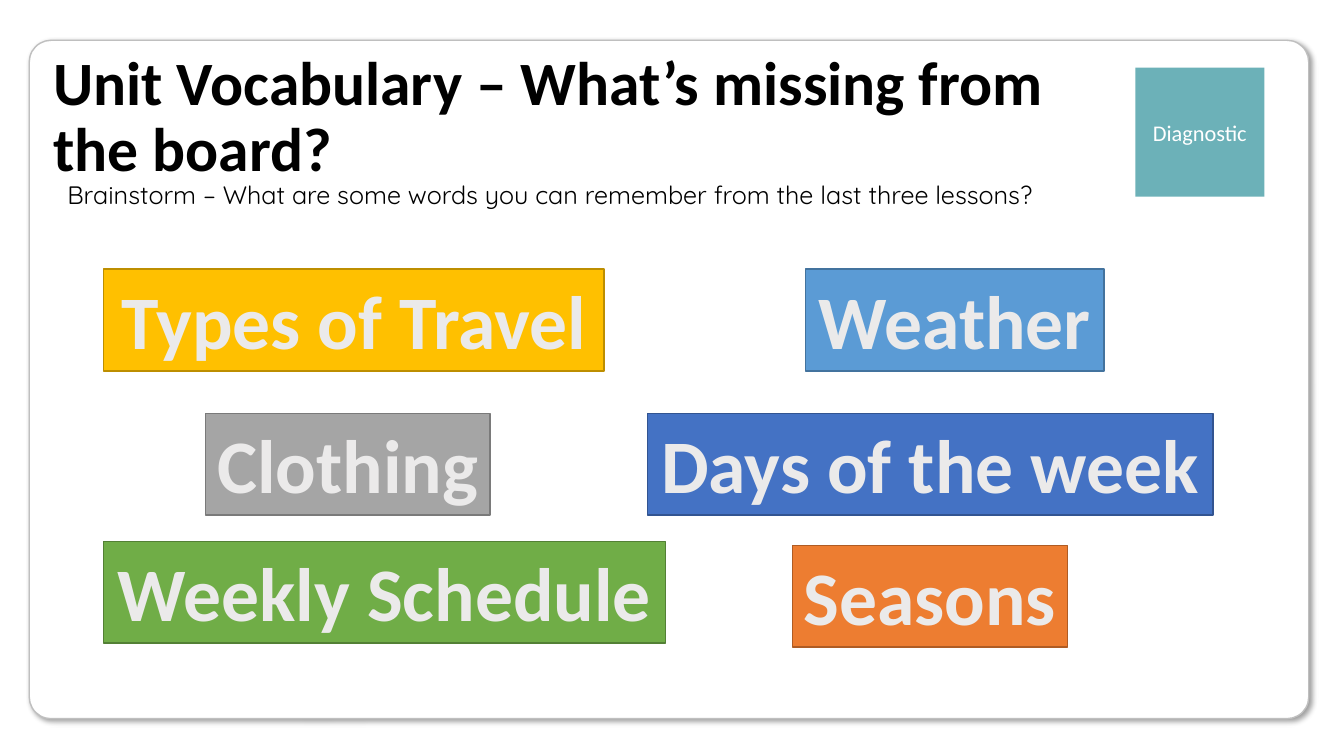
"""Build the unit vocabulary slide with its six topic labels."""
from lxml import etree
from pptx import Presentation
from pptx.dml.color import RGBColor
from pptx.enum import shapes, text
from pptx.oxml import ns
from pptx.util import Inches, Pt

WHITE = RGBColor(0xFF, 0xFF, 0xFF)
BLACK = RGBColor(0x00, 0x00, 0x00)
CARD_LINE = RGBColor(0xBF, 0xBF, 0xBF)
TEAL = RGBColor(0x6C, 0xB1, 0xB8)
LABEL_TEXT = RGBColor(0xEB, 0xEA, 0xEA)
LABEL_OUTLINE = RGBColor(0x3A, 0x52, 0x74)
BLUE, BLUE_LINE = RGBColor(0x5B, 0x9B, 0xD5), RGBColor(0x43, 0x73, 0x9E)
GOLD, GOLD_LINE = RGBColor(0xFF, 0xC0, 0x00), RGBColor(0xBD, 0x8E, 0x00)
GRAY, GRAY_LINE = RGBColor(0xA5, 0xA5, 0xA5), RGBColor(0x7A, 0x7A, 0x7A)
ORANGE, ORANGE_LINE = RGBColor(0xED, 0x7D, 0x31), RGBColor(0xAF, 0x5C, 0x24)
NAVY, NAVY_LINE = RGBColor(0x44, 0x72, 0xC4), RGBColor(0x32, 0x54, 0x91)
GREEN, GREEN_LINE = RGBColor(0x70, 0xAD, 0x47), RGBColor(0x53, 0x80, 0x35)

LABEL_HEIGHT = 1.01
LABELS = [
    ("Weather", 7.99, 2.67, 2.96, BLUE, BLUE_LINE),
    ("Types of Travel", 1.03, 2.67, 4.96, GOLD, GOLD_LINE),
    ("Clothing", 2.04, 4.1, 2.82, GRAY, GRAY_LINE),
    ("Seasons", 7.86, 5.41, 2.73, ORANGE, ORANGE_LINE),
    ("Days of the week", 6.42, 4.1, 5.61, NAVY, NAVY_LINE),
    ("Weekly Schedule", 1.03, 5.37, 5.57, GREEN, GREEN_LINE),
]


def write(shape, words, size, color, font="Calibri", bold=False, align=None):
    """Put one formatted paragraph in a shape and return it."""
    shape.text_frame.text = words
    paragraph = shape.text_frame.paragraphs[0]
    paragraph.alignment = align
    paragraph.font.name = font
    paragraph.font.size = Pt(size)
    paragraph.font.bold = bold
    paragraph.font.color.rgb = color
    return paragraph


def add_box(slide, kind, box, fill, line=None):
    """Add a filled preset shape, with a thin line if a colour is given."""
    shape = slide.shapes.add_shape(kind, *map(Inches, box))
    shape.shadow.inherit = False
    shape.fill.solid()
    shape.fill.fore_color.rgb = fill
    if line is None:
        shape.line.fill.background()
    else:
        shape.line.color.rgb = line
        shape.line.width = Pt(1)
    return shape


def add_card(slide):
    """Add the rounded white card with its soft shadow."""
    card = add_box(slide, shapes.MSO_SHAPE.ROUNDED_RECTANGLE,
                   (0.29, 0.4, 12.69, 6.73), WHITE, CARD_LINE)
    card.adjustments[0] = 0.032
    effects = card._element.spPr.find(ns.qn("a:effectLst"))
    shadow = etree.SubElement(
        effects, ns.qn("a:outerShdw"), blurRad=str(Pt(4)), dist=str(Pt(3)),
        dir="2700000", algn="tl", rotWithShape="0")
    color = etree.SubElement(shadow, ns.qn("a:srgbClr"), val=str(BLACK))
    etree.SubElement(color, ns.qn("a:alpha"), val="40000")


def outline_text(paragraph, color):
    """Give the letters of a paragraph a one-point outline."""
    line = etree.Element(ns.qn("a:ln"), w=str(Pt(1)))
    fill = etree.SubElement(line, ns.qn("a:solidFill"))
    etree.SubElement(fill, ns.qn("a:srgbClr"), val=str(color))
    paragraph._p.pPr.find(ns.qn("a:defRPr")).insert(0, line)


def add_label(slide, words, left, top, width, fill, line):
    """Add one coloured topic label."""
    label = add_box(slide, shapes.MSO_SHAPE.RECTANGLE,
                    (left, top, width, LABEL_HEIGHT), fill, line)
    paragraph = write(label, words, 54, LABEL_TEXT, bold=True,
                      align=text.PP_ALIGN.CENTER)
    outline_text(paragraph, LABEL_OUTLINE)
    label.text_frame.word_wrap = False
    label.text_frame.auto_size = text.MSO_AUTO_SIZE.SHAPE_TO_FIT_TEXT
    label.text_frame.vertical_anchor = text.MSO_ANCHOR.TOP


def format_title(slide, words):
    """Place and format the title in front of the card."""
    title = slide.shapes.title
    title.left, title.top, title.width, title.height = map(
        Inches, (0.46, 0.4, 10.83, 1.55))
    paragraph = write(title, words, 44, BLACK, bold=True,
                      align=text.PP_ALIGN.LEFT)
    paragraph.line_spacing = 0.9
    frame = title.text_frame
    frame.word_wrap = True
    frame.auto_size = text.MSO_AUTO_SIZE.NONE
    frame.vertical_anchor = text.MSO_ANCHOR.MIDDLE
    frame.margin_left = frame.margin_right = Inches(0.07)
    frame.margin_top = frame.margin_bottom = Inches(0.04)
    slide.shapes._spTree.append(title._element)


def add_prompt(slide, words):
    """Add the brainstorm question under the title."""
    prompt = slide.shapes.add_textbox(*map(Inches, (0.57, 1.73, 10.83, 0.4)))
    prompt.text_frame.word_wrap = True
    prompt.text_frame.auto_size = text.MSO_AUTO_SIZE.SHAPE_TO_FIT_TEXT
    write(prompt, words, 18, BLACK, font="Quicksand")


def main():
    """Build and save the slide."""
    presentation = Presentation()
    presentation.slide_width = Inches(13.33)
    presentation.slide_height = Inches(7.5)
    slide = presentation.slides.add_slide(presentation.slide_layouts[5])
    add_card(slide)
    badge = add_box(slide, shapes.MSO_SHAPE.RECTANGLE,
                    (11.26, 0.67, 1.28, 1.28), TEAL)
    badge.text_frame.vertical_anchor = text.MSO_ANCHOR.MIDDLE
    write(badge, "Diagnostic", 16, WHITE, align=text.PP_ALIGN.CENTER)
    format_title(slide, "Unit Vocabulary – What’s missing from the board?")
    add_prompt(slide, "Brainstorm – What are some words you can remember "
                      "from the last three lessons?")
    for label in LABELS:
        add_label(slide, *label)
    presentation.save("out.pptx")


if __name__ == "__main__":
    main()
